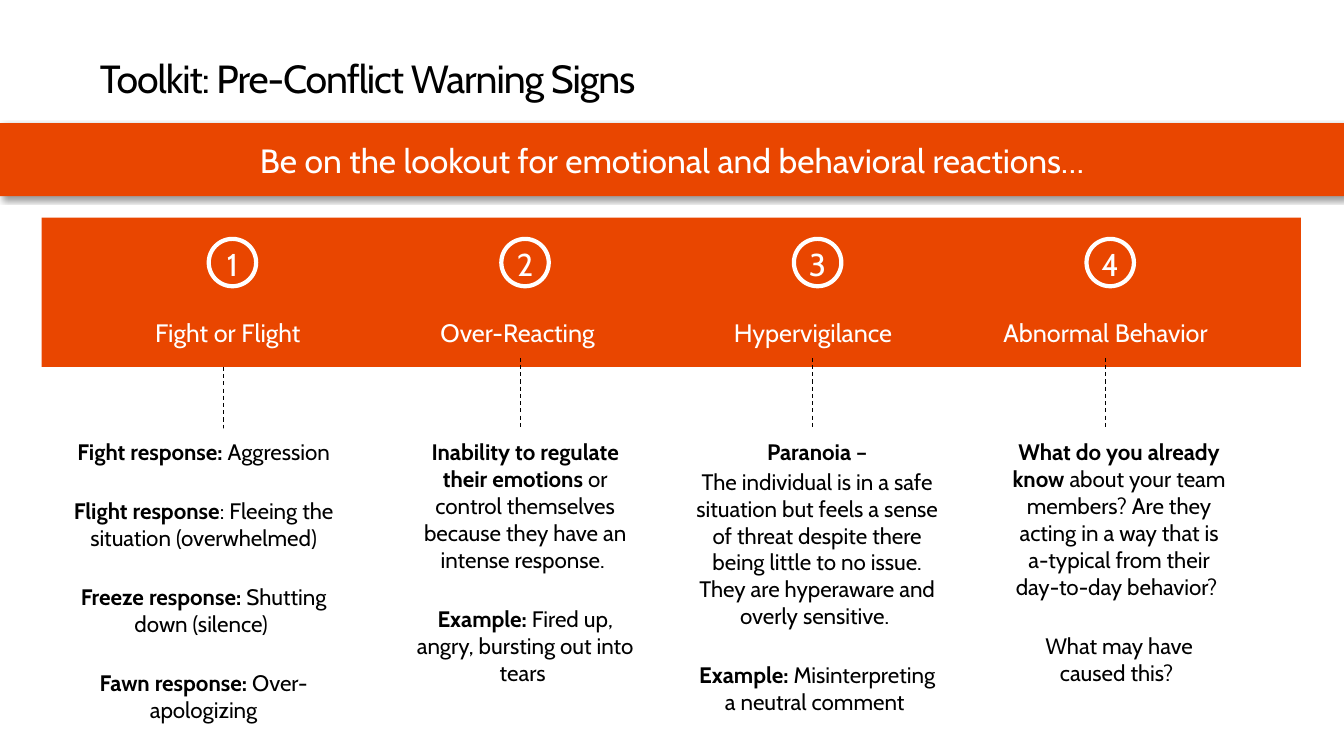
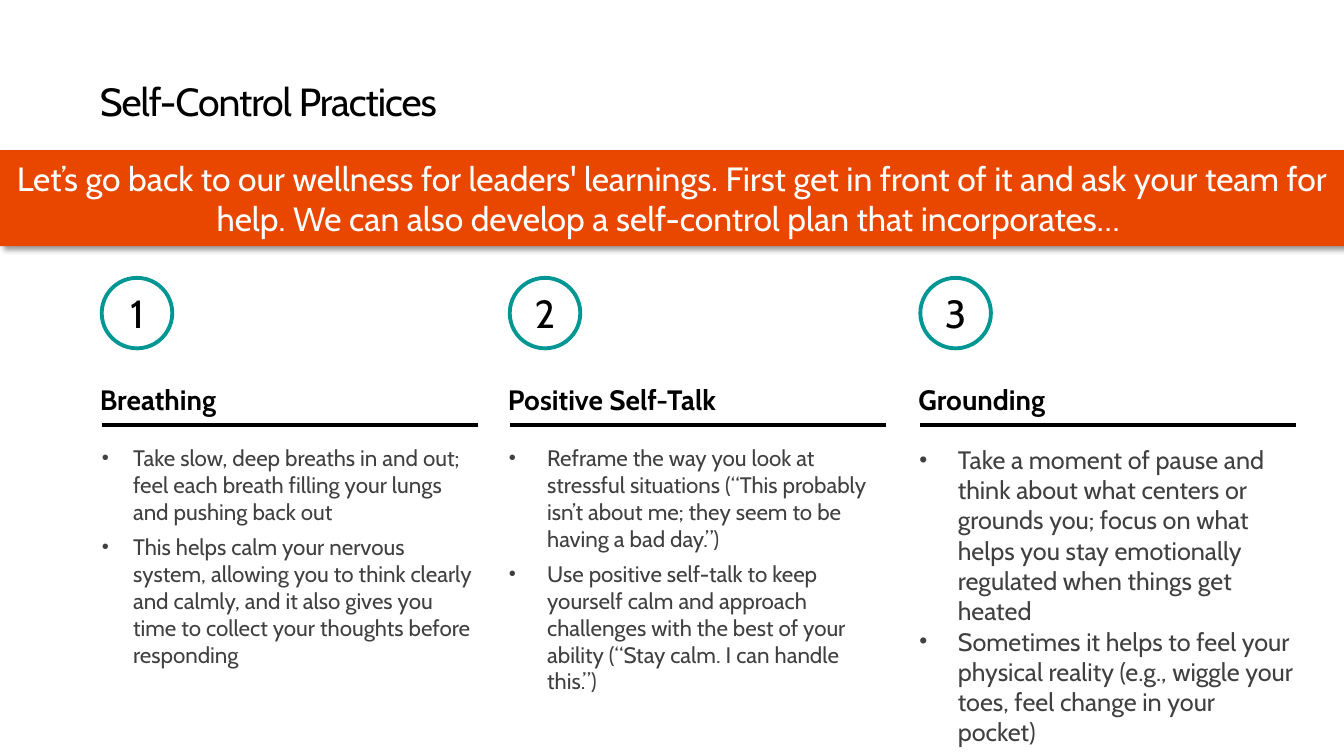
from collections import namedtuple

from lxml import etree
from pptx import Presentation
from pptx import util as u
from pptx.dml import color as dml
from pptx.enum import dml as lines, shapes, text
from pptx.oxml import ns

# Boxes are given in percent of the slide's width and height
WIDTH, HEIGHT = 13.33, 7.5
Box = namedtuple("Box", "left top width height")

FONT = "Cabin"
COLORS = {"orange": "E94600", "teal": "009693", "ink": "000000",
          "gray": "404040", "white": "FFFFFF"}
RECTANGLE, OVAL = shapes.MSO_SHAPE.RECTANGLE, shapes.MSO_SHAPE.OVAL
CENTER, LEFT = text.PP_ALIGN.CENTER, text.PP_ALIGN.LEFT
TOP, MIDDLE, BOTTOM = (text.MSO_ANCHOR.TOP, text.MSO_ANCHOR.MIDDLE,
                       text.MSO_ANCHOR.BOTTOM)

# Text styles: color, character spacing, font values, paragraph values
Style = namedtuple("Style", "color tracking font paragraph")
STYLES = {
    "title": Style("ink", -0.75, {"size": u.Pt(28)}, {"line_spacing": 0.9}),
    "band": Style("white", 0, {"size": u.Pt(24)}, {"alignment": CENTER}),
    "sign": Style("white", 0, {"size": u.Pt(18)}, {"alignment": CENTER}),
    "sign number": Style("white", 0, {"size": u.Pt(22.5)},
                         {"alignment": CENTER, "line_spacing": 1.06}),
    "detail": Style("ink", 0, {"size": u.Pt(16)}, {"alignment": CENTER}),
    "practice number": Style("ink", 0, {"size": u.Pt(28)}, {"alignment": CENTER}),
    "heading": Style("ink", 0, {"size": u.Pt(20), "bold": True},
                     {"line_spacing": 1.06}),
    "bullet": Style("gray", 0, {"size": u.Pt(16)}, {"alignment": LEFT}),
    "large bullet": Style("gray", 0, {"size": u.Pt(18)}, {"alignment": LEFT}),
}

# Each sign: name, detail offset and size, connector offset and top,
# gap before later paragraphs, then (bold, plain) paragraphs
Sign = namedtuple("Sign", "name shift width height thread thread_top gaps details")
GAP, TIGHT = 23, 1.9
SIGNS = [
    Sign("Fight or Flight", -3.97, 20.55, 40.67, 7.8, 48.53, (GAP, GAP, GAP), [
        ("Fight response: ", "Aggression"),
        ("Flight response", ": Fleeing the situation (overwhelmed)"),
        ("Freeze response: ", "Shutting down (silence) "),
        ("Fawn response: ", "Over-apologizing")]),
    Sign("Over-Reacting ", 0.36, 16.2, 35.6, 8.1, 47.33, (GAP,), [
        ("Inability to regulate their emotions",
         " or control themselves because they have an intense response. "),
        ("Example: ", "Fired up, angry, bursting out into tears ")]),
    Sign("Hypervigilance", -0.85, 18.53, 39.6, 8.1, 47.33, (TIGHT, GAP), [
        ("Paranoia –", ""),
        ("", "The individual is in a safe situation but feels a sense of threat "
             "despite there being little to no issue. They are hyperaware and "
             "overly sensitive. "),
        ("Example: ", "Misinterpreting a neutral comment ")]),
    Sign("Abnormal Behavior", 1.01, 16.2, 35.6, 8.1, 47.33, (GAP,), [
        ("What do you already know ",
         "about your team members? Are they acting in a way that is a-typical "
         "from their day-to-day behavior? "),
        ("", "What may have caused this? ")]),
]

# Each practice: name, left, bullet style, indent and hanging in inches, gap, bullets
Practice = namedtuple("Practice", "name left style indent hanging gap bullets")
PRACTICES = [
    Practice("Breathing", 7.43, "bullet", 0.33, 0.31, 6, [
        "Take slow, deep breaths in and out; feel each breath filling your lungs "
        "and pushing back out",
        "This helps calm your nervous system, allowing you to think clearly and "
        "calmly, and it also gives you time to collect your thoughts before "
        "responding"]),
    Practice("Positive Self-Talk", 37.79, "bullet", 0.39, 0.38, 6, [
        "Reframe the way you look at stressful situations (“This probably isn’t "
        "about me; they seem to be having a bad day.”)",
        "Use positive self-talk to keep yourself calm and approach challenges "
        "with the best of your ability (“Stay calm. I can handle this.”)"]),
    Practice("Grounding", 68.34, "large bullet", 0.39, 0.38, 0.2, [
        "Take a moment of pause and think about what centers or grounds you; "
        "focus on what helps you stay emotionally regulated when things get heated",
        "Sometimes it helps to feel your physical reality (e.g., wiggle your "
        "toes, feel change in your pocket)"]),
]


def across(percent):
    return u.Inches(WIDTH * percent / 100)


def down(percent):
    return u.Inches(HEIGHT * percent / 100)


def place(box):
    return across(box.left), down(box.top), across(box.width), down(box.height)


def rgb(name):
    return dml.RGBColor.from_string(COLORS[name])


def apply(target, values):
    for name, value in values.items():
        setattr(target, name, value)


def add_element(parent, tag, **attributes):
    element = etree.SubElement(parent, ns.qn(tag))
    for name, value in attributes.items():
        element.set(name, str(value))
    return element


def add_shape(slide, kind, box, fill, line=None, line_width=0):
    shape = slide.shapes.add_shape(kind, *place(box))
    shape.shadow.inherit = False
    shape.fill.solid()
    shape.fill.fore_color.rgb = rgb(fill)
    if line:
        shape.line.color.rgb = rgb(line)
        shape.line.width = u.Pt(line_width)
    else:
        shape.line.fill.background()
    return shape


def add_line(slide, left, top, right, bottom, width, dash=None):
    line = slide.shapes.add_connector(shapes.MSO_CONNECTOR.STRAIGHT, across(left),
                                      down(top), across(right), down(bottom))
    line.line.color.rgb = rgb("ink")
    apply(line.line, {"width": u.Pt(width), "dash_style": dash})
    add_element(line._element.spPr, "a:effectLst")


def write(shape, paragraphs, style_name, anchor=TOP, insets=(0, 0, 0, 0),
          gaps=(), bullet=None, wrap=True):
    """Write paragraphs of (bold, plain) pairs or plain strings."""
    style, frame = STYLES[style_name], shape.text_frame
    sides = ("margin_left", "margin_top", "margin_right", "margin_bottom")
    apply(frame, dict(zip(sides, map(u.Inches, insets)),
                      word_wrap=wrap, vertical_anchor=anchor))
    for index, content in enumerate(paragraphs):
        paragraph = frame.add_paragraph() if index else frame.paragraphs[0]
        if bullet:
            indent, hanging = bullet
            properties = paragraph._p.get_or_add_pPr()
            properties.set("marL", str(u.Inches(indent)))
            properties.set("indent", str(-u.Inches(hanging)))
            add_element(properties, "a:buSzPct", val=90000)
            add_element(properties, "a:buFont", typeface="Arial")
            add_element(properties, "a:buChar", char="•")
        apply(paragraph, style.paragraph)
        if index:
            paragraph.space_before = u.Pt(gaps[index - 1])
        pair = ("", content) if isinstance(content, str) else content
        for words, bold in zip(pair, (True, False)):
            if words:
                run = paragraph.add_run()
                run.text = words
                apply(run.font, {"name": FONT, "bold": bold, **style.font})
                run.font.color.rgb = rgb(style.color)
                if style.tracking:
                    run._r.get_or_add_rPr().set("spc", str(int(style.tracking * 100)))


def add_text(slide, box, paragraphs, style_name, **options):
    write(slide.shapes.add_textbox(*place(box)), paragraphs, style_name, **options)


def add_panel(slide, box, fill, paragraphs, style_name, **options):
    write(add_shape(slide, RECTANGLE, box, fill), paragraphs, style_name, **options)


def add_header(slide, title, title_top, message, band):
    """Title and the full-width band with its drop shadow."""
    add_text(slide, Box(7.43, title_top, 85, 8.67), [title], "title",
             anchor=BOTTOM, insets=(0, 0.05, 0, 0))
    shape = add_shape(slide, RECTANGLE, band, "orange")
    effects = shape._element.spPr.find(ns.qn("a:effectLst"))
    shadow = add_element(effects, "a:outerShdw", blurRad=u.Pt(4), dist=u.Pt(3),
                         dir=45 * 60000, algn="tl", rotWithShape=0)
    shade = add_element(shadow, "a:srgbClr", val=COLORS["ink"])
    add_element(shade, "a:alpha", val=40000)
    write(shape, [message], "band", anchor=MIDDLE, insets=(0.1, 0.05, 0.1, 0.05))


def add_number(slide, box, number, style_name, fill, line, line_width):
    circle = add_shape(slide, OVAL, box, fill, line, line_width)
    write(circle, [str(number)], style_name, anchor=MIDDLE, wrap=False)


def add_sign(slide, box, number, sign):
    """One warning sign: number, name, dashed connector and details."""
    padding = (0, 0.09, 0, 0.09)
    add_panel(slide, Box(box.left, box.top + 12, box.width, 6.53), "orange",
              [sign.name], "sign", insets=padding)
    add_number(slide, Box(box.left + 6.68, box.top + 2.8, 3.53, 6.27), number,
               "sign number", "orange", "white", 3)
    detail_top = box.top + 27.87
    thread = box.left + sign.thread
    add_line(slide, thread, sign.thread_top, thread, sign.thread_top + 20.6, 0.75,
             lines.MSO_LINE.DASH)
    add_panel(slide, Box(box.left + sign.shift, detail_top, sign.width, sign.height),
              "white", sign.details, "detail", insets=(0, 0.1, 0, 0.09),
              gaps=sign.gaps)


def add_practice(slide, box, number, practice):
    """One practice: number, heading, rule and bullets."""
    rule_left, rule_top = box.left + 0.14, box.top + 19.47
    add_number(slide, Box(rule_left, box.top, 5.25, 9.33), number,
               "practice number", "white", "teal", 2.75)
    add_text(slide, Box(box.left, box.top + 13.6, box.width, 4.67),
             [(practice.name, "")], "heading")
    add_line(slide, rule_left, rule_top, rule_left + box.width, rule_top, 3)
    add_text(slide, Box(box.left, box.top + 22, box.width, box.height - 22),
             practice.bullets, practice.style, gaps=(practice.gap,),
             bullet=(practice.indent, practice.hanging))


def build_signs(slide):
    add_header(slide, "Toolkit: Pre-Conflict Warning Signs", 4.8,
               "Be on the lookout for emotional and behavioral reactions…",
               Box(0, 16.3, 100, 9.65))
    panel = Box(3.1, 28.8, 93.7, 19.73)
    add_shape(slide, RECTANGLE, panel, "orange")
    for index, sign in enumerate(SIGNS):
        column = Box(8.85 + 21.77 * index, panel.top, 16.2, panel.height)
        add_sign(slide, column, index + 1, sign)


def build_practices(slide):
    add_header(slide, "Self-Control Practices", 7.87,
               "Let’s go back to our wellness for leaders' learnings. First get in "
               "front of it and ask your team for help. We can also develop a "
               "self-control plan that incorporates… ",
               Box(0, 19.87, 100, 12.7))
    for index, practice in enumerate(PRACTICES):
        column = Box(practice.left, 36.75, 27.98, 63)
        add_practice(slide, column, index + 1, practice)


def main():
    presentation = Presentation()
    apply(presentation, {"slide_width": across(100), "slide_height": down(100)})
    for build in (build_signs, build_practices):
        build(presentation.slides.add_slide(presentation.slide_layouts[6]))
    presentation.save("out.pptx")


if __name__ == "__main__":
    main()
